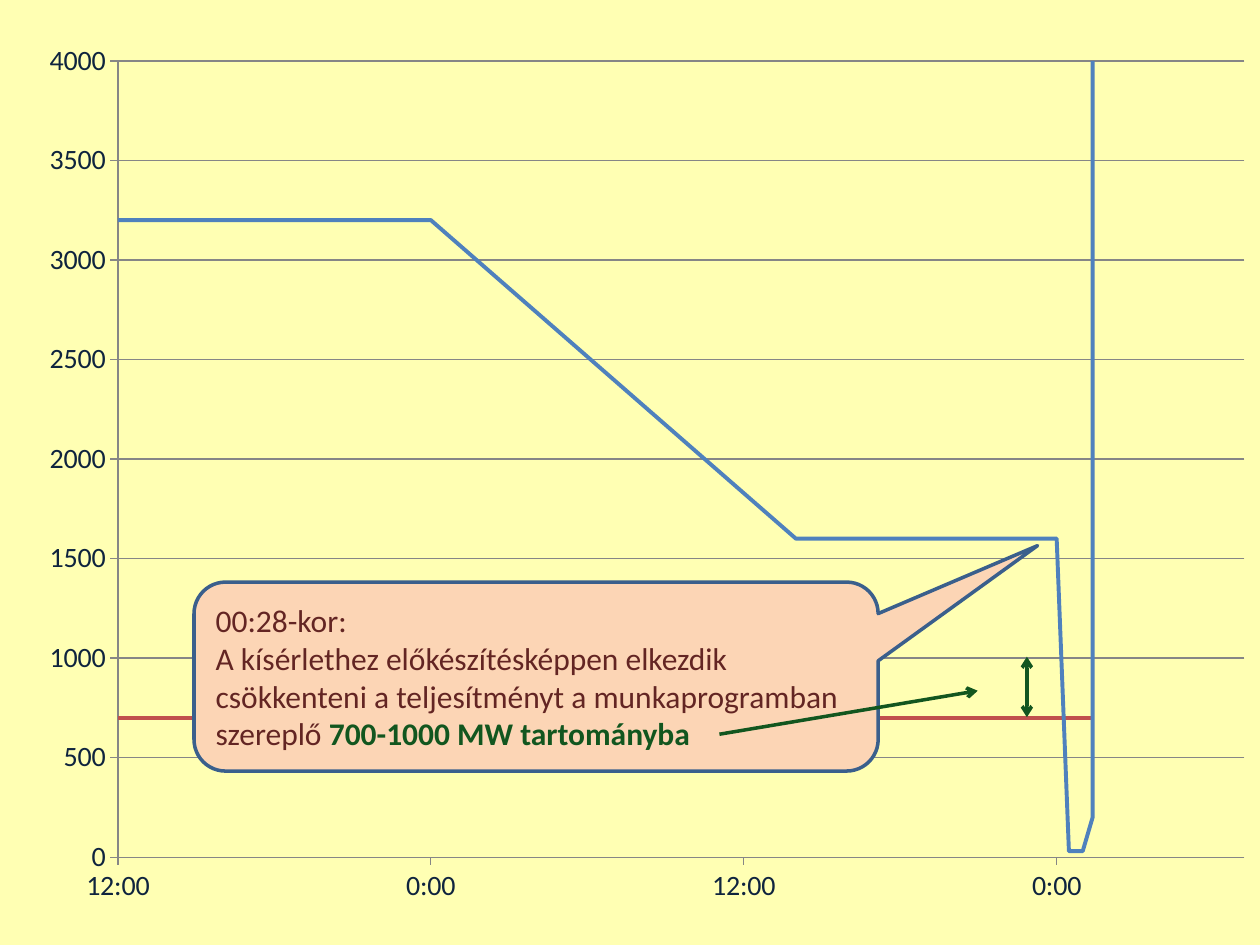
from dataclasses import dataclass
from pptx import Presentation
from pptx.chart.data import XyChartData
from pptx.dml.color import RGBColor as RGB
from pptx.enum.chart import XL_CHART_TYPE as CHART, XL_TICK_LABEL_POSITION as LABEL, XL_TICK_MARK as TICK
from pptx.enum.shapes import MSO_CONNECTOR as CONN, MSO_SHAPE as SHAPE
from pptx.enum.text import MSO_ANCHOR as ANCHOR, PP_ALIGN as ALIGN
from pptx.oxml import parse_xml
from pptx.oxml.ns import nsdecls, qn
from pptx.util import Inches, Pt
from lxml.etree import SubElement


@dataclass(frozen=True)
class Theme:
    font: str = "Calibri"
    background: RGB = RGB(0xFF, 0xFF, 0xB3)
    axis: RGB = RGB(0x86, 0x86, 0x86)
    axis_text: RGB = RGB(0x0F, 0x24, 0x3E)
    power: RGB = RGB(0x4F, 0x81, 0xBD)
    limit: RGB = RGB(0xC0, 0x50, 0x4D)
    callout_fill: RGB = RGB(0xFC, 0xD5, 0xB5)
    callout_line: RGB = RGB(0x3A, 0x5F, 0x8C)
    callout_text: RGB = RGB(0x63, 0x25, 0x23)
    target: RGB = RGB(0x12, 0x56, 0x1F)
    axis_size: Pt = Pt(16)
    text_size: Pt = Pt(18)
    curve_width: Pt = Pt(2.25)
    line_width: Pt = Pt(2)
    axis_width: Pt = Pt(0.75)


T = Theme()
WIDTH, HEIGHT = Inches(10), Inches(7.5)
DAY = 31527
HOURS = [-12, 0, 14, 23, 24, 24.47, 25, 25.38, 25.38]
POWER = [3200, 3200, 1600, 1600, 1600, 30, 30, 200, 5000]
LIMIT = [700] * len(HOURS)


def place(x, y):
    return round(x * WIDTH), round(y * HEIGHT)


def style_axis(axis, low, high, step, number_format):
    axis.minimum_scale, axis.maximum_scale, axis.major_unit = low, high, step
    axis.major_tick_mark, axis.minor_tick_mark = TICK.OUTSIDE, TICK.NONE
    axis.tick_label_position = LABEL.LOW
    labels = axis.tick_labels
    labels.number_format, labels.number_format_is_linked = number_format, False
    labels.font.name, labels.font.size = T.font, T.axis_size
    labels.font.color.rgb = T.axis_text
    axis.format.line.color.rgb = T.axis
    axis.format.line.width = T.axis_width


def set_plot_area(chart, x, y, w, h):
    area = chart._chartSpace.chart.plotArea
    for old in area.findall(qn("c:layout")):
        area.remove(old)
    layout = parse_xml(f"<c:layout {nsdecls('c')}><c:manualLayout/></c:layout>")
    settings = [("layoutTarget", "inner"), ("xMode", "edge"), ("yMode", "edge"),
                ("x", x), ("y", y), ("w", w), ("h", h)]
    for tag, value in settings:
        SubElement(layout[0], qn(f"c:{tag}")).set("val", str(value))
    area.insert(0, layout)


def add_power_chart(s, x, y, w, h):
    data = XyChartData()
    for name, values in (("Series 1", POWER), ("Series 2", LIMIT)):
        series = data.add_series(name)
        for hour, value in zip(HOURS, values):
            series.add_data_point(DAY + hour / 24, value)
    chart = s.shapes.add_chart(CHART.XY_SCATTER_LINES_NO_MARKERS,
                               *place(x, y), *place(w, h), data).chart
    chart.has_legend = chart.has_title = False
    chart.font.name, chart.font.size = T.font, T.axis_size
    chart.plots[0].vary_by_categories = False
    style_axis(chart.category_axis, DAY - 0.5, DAY + 1.3, 0.5, "h:mm;@")
    style_axis(chart.value_axis, 0, 4000, 500, "General")
    chart.category_axis.has_major_gridlines = False
    chart.value_axis.has_major_gridlines = True
    grid = chart.value_axis.major_gridlines.format.line
    grid.color.rgb, grid.width = T.axis, T.axis_width
    for series, color in zip(chart.plots[0].series, (T.power, T.limit)):
        series.smooth = False
        series.format.line.color.rgb = color
        series.format.line.width = T.curve_width
    set_plot_area(chart, 0.0745, 0.0385, 0.905, 0.889)


def add_callout(s, x, y, w, h):
    sp = s.shapes.add_shape(SHAPE.ROUNDED_RECTANGULAR_CALLOUT, *place(x, y), *place(w, h))
    sp.shadow.inherit = False
    for i, value in enumerate((0.733, -0.693, 0.167)):
        sp.adjustments[i] = value
    sp.fill.solid()
    sp.fill.fore_color.rgb = T.callout_fill
    sp.line.color.rgb, sp.line.width = T.callout_line, T.line_width
    tf = sp.text_frame
    tf.word_wrap, tf.vertical_anchor = True, ANCHOR.MIDDLE
    lines = ("00:28-kor:",
             "A kísérlethez előkészítésképpen elkezdik csökkenteni "
             "a teljesítményt a munkaprogramban szereplő ")
    for i, line in enumerate(lines):
        p = tf.add_paragraph() if i else tf.paragraphs[0]
        p.alignment = ALIGN.LEFT
        p.font.name, p.font.size = T.font, T.text_size
        r = p.add_run()
        r.text, r.font.color.rgb = line, T.callout_text
    r = p.add_run()
    r.text, r.font.bold = "700-1000 MW tartományba", True
    r.font.color.rgb = T.target


def add_arrow(s, x, y, w, h, both_ends=False):
    c = s.shapes.add_connector(CONN.STRAIGHT, *place(x, y), *place(x + w, y + h))
    c.line.color.rgb, c.line.width = T.target, T.line_width
    ln = c.line._get_or_add_ln()
    for end in ("headEnd", "tailEnd") if both_ends else ("tailEnd",):
        SubElement(ln, qn(f"a:{end}")).set("type", "arrow")
    SubElement(c._element.spPr, qn("a:effectLst"))


def build_slide(prs):
    s = prs.slides.add_slide(prs.slide_layouts[6])
    s.background.fill.solid()
    s.background.fill.fore_color.rgb = T.background
    add_power_chart(s, 0.02, 0.028, 0.988, 0.948)
    add_arrow(s, 0.815, 0.695, 0, 0.064, both_ends=True)
    add_callout(s, 0.154, 0.616, 0.543, 0.2)
    add_arrow(s, 0.571, 0.777, 0.205, -0.046)


def main():
    prs = Presentation()
    prs.slide_width, prs.slide_height = WIDTH, HEIGHT
    build_slide(prs)
    prs.save("out.pptx")


if __name__ == "__main__":
    main()
